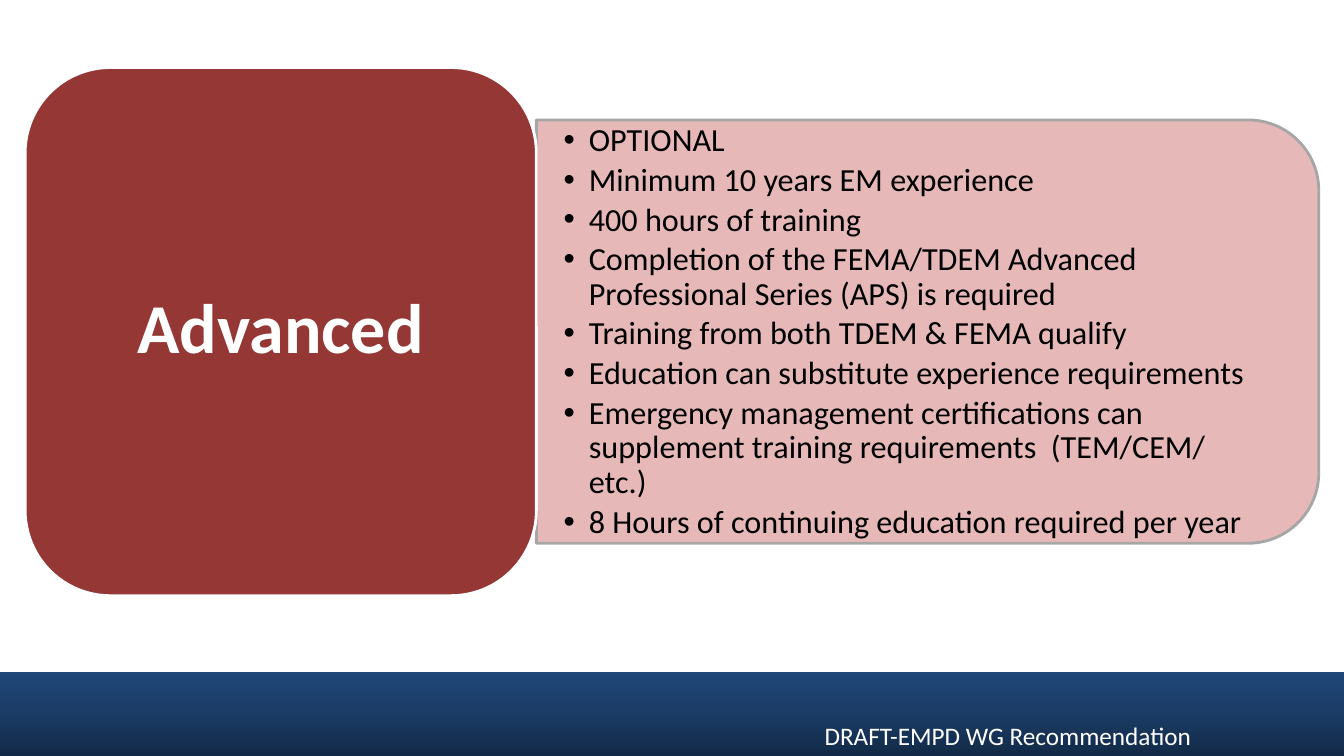
from copy import deepcopy
from dataclasses import dataclass

from pptx import Presentation
from pptx.dml.color import RGBColor
from pptx.enum.shapes import MSO_SHAPE
from pptx.enum.text import MSO_ANCHOR, MSO_AUTO_SIZE, PP_ALIGN
from pptx.oxml.ns import qn
from pptx.oxml.xmlchemy import OxmlElement
from pptx.util import Inches, Pt

RECTANGLE = MSO_SHAPE.RECTANGLE
ROUNDED = MSO_SHAPE.ROUNDED_RECTANGLE
ROUNDED_TOP = MSO_SHAPE.ROUND_2_SAME_RECTANGLE
MIDDLE, TOP = MSO_ANCHOR.MIDDLE, MSO_ANCHOR.TOP
NO_FIT = MSO_AUTO_SIZE.NONE
LEFT, CENTER = PP_ALIGN.LEFT, PP_ALIGN.CENTER

FONT = "Calibri"
WHITE, BLACK = "FFFFFF", "000000"
BAND_STOPS = [(0, "122A47"), (0.5, "1A3C65"), (1, "1F4778")]
REQUIREMENTS = [
    "OPTIONAL",
    "Minimum 10 years EM experience",
    "400 hours of training",
    "Completion of the FEMA/TDEM Advanced Professional Series (APS) is required",
    "Training from both TDEM & FEMA qualify",
    "Education can substitute experience requirements",
    "Emergency management certifications can supplement training requirements  (TEM/CEM/ etc.)",
    "8 Hours of continuing education required per year",
]


@dataclass
class Area:
    left: float
    top: float
    width: float
    height: float

    def lengths(self) -> list:
        return [Inches(n) for n in (self.left, self.top, self.width, self.height)]


@dataclass
class Panel:
    preset: int
    area: Area
    fill: str
    line: str
    rotation: int = 0


@dataclass
class TextStyle:
    size: float
    color: str
    bold: bool = False
    align: int = LEFT
    anchor: int = MIDDLE
    inset_x: float = 0.1
    inset_y: float = 0.05
    line_spacing: float = 1.0
    space_after: float = 0
    bulleted: bool = False


PANELS = [
    Panel(ROUNDED_TOP, Area(7.1, -0.59, 4.2, 7.76), "E6B9B8", "A6A6A6", 90),
    Panel(ROUNDED, Area(0.25, 0.67, 5.07, 5.24), "953735", WHITE),
]
LIST_STYLE = TextStyle(23, BLACK, inset_x=0.27, inset_y=0.14, line_spacing=0.9,
                       space_after=3.45, bulleted=True)
TITLE_STYLE = TextStyle(50, WHITE, bold=True, align=CENTER, inset_x=0.21,
                        inset_y=0.1, line_spacing=0.9)
FOOTER_STYLE = TextStyle(18, WHITE, anchor=TOP)


def rgb(color: str) -> RGBColor:
    return RGBColor.from_string(color)


def add_band(page, area: Area) -> None:
    band = page.shapes.add_shape(RECTANGLE, *area.lengths())
    band.shadow.inherit = False
    band.line.fill.background()
    band.fill.gradient()
    band.fill.gradient_angle = 90
    stop_list = band.fill._xPr.find(qn("a:gradFill")).find(qn("a:gsLst"))
    stop_list.append(deepcopy(stop_list[0]))
    for stop, (position, color) in zip(band.fill.gradient_stops, BAND_STOPS):
        stop.position = position
        stop.color.rgb = rgb(color)


def add_panel(page, panel: Panel) -> None:
    shape = page.shapes.add_shape(panel.preset, *panel.area.lengths())
    shape.shadow.inherit = False
    shape.rotation = panel.rotation
    shape.fill.solid()
    shape.fill.fore_color.rgb = rgb(panel.fill)
    shape.line.color.rgb = rgb(panel.line)
    shape.line.width = Pt(2)


def add_bullet(para) -> None:
    properties = para._p.get_or_add_pPr()
    properties.set("marL", str(Inches(0.25)))
    properties.set("indent", str(-Inches(0.25)))
    bullet = OxmlElement("a:buChar")
    bullet.set("char", "•")
    properties.append(bullet)


def write_text(box, area: Area, lines: list[str], style: TextStyle) -> None:
    box.left, box.top, box.width, box.height = area.lengths()
    frame = box.text_frame
    frame.word_wrap = True
    frame.auto_size = NO_FIT
    frame.vertical_anchor = style.anchor
    frame.margin_left = frame.margin_right = Inches(style.inset_x)
    frame.margin_top = frame.margin_bottom = Inches(style.inset_y)
    for index, line in enumerate(lines):
        para = frame.add_paragraph() if index else frame.paragraphs[0]
        if style.bulleted:
            add_bullet(para)
        para.alignment = style.align
        para.line_spacing = style.line_spacing
        para.space_before = Pt(0)
        para.space_after = Pt(style.space_after)
        span = para.add_run()
        span.text = line
        span.font.name = FONT
        span.font.size = Pt(style.size)
        span.font.bold = style.bold
        span.font.color.rgb = rgb(style.color)


def main() -> None:
    deck = Presentation()
    deck.slide_width, deck.slide_height = Inches(13.33), Inches(7.5)
    page = deck.slides.add_slide(deck.slide_layouts[1])
    title, body = page.placeholders[0], page.placeholders[1]

    # Bottom band and coloured panels
    add_band(page, Area(0, 6.67, 13.33, 0.83))
    for panel in PANELS:
        add_panel(page, panel)

    # Level name and its requirements, brought in front of the panels
    for box in (body, title):
        page.shapes._spTree.append(box._element)
    write_text(body, Area(5.32, 1.4, 7.56, 3.79), REQUIREMENTS, LIST_STYLE)
    write_text(title, Area(0.5, 0.91, 4.57, 4.75), ["Advanced"], TITLE_STYLE)

    # Footer
    footer_area = Area(8.08, 7.1, 5.25, 0.4)
    footer = page.shapes.add_textbox(*footer_area.lengths())
    write_text(footer, footer_area, ["DRAFT-EMPD WG Recommendation"], FOOTER_STYLE)

    deck.save("out.pptx")


if __name__ == "__main__":
    main()
